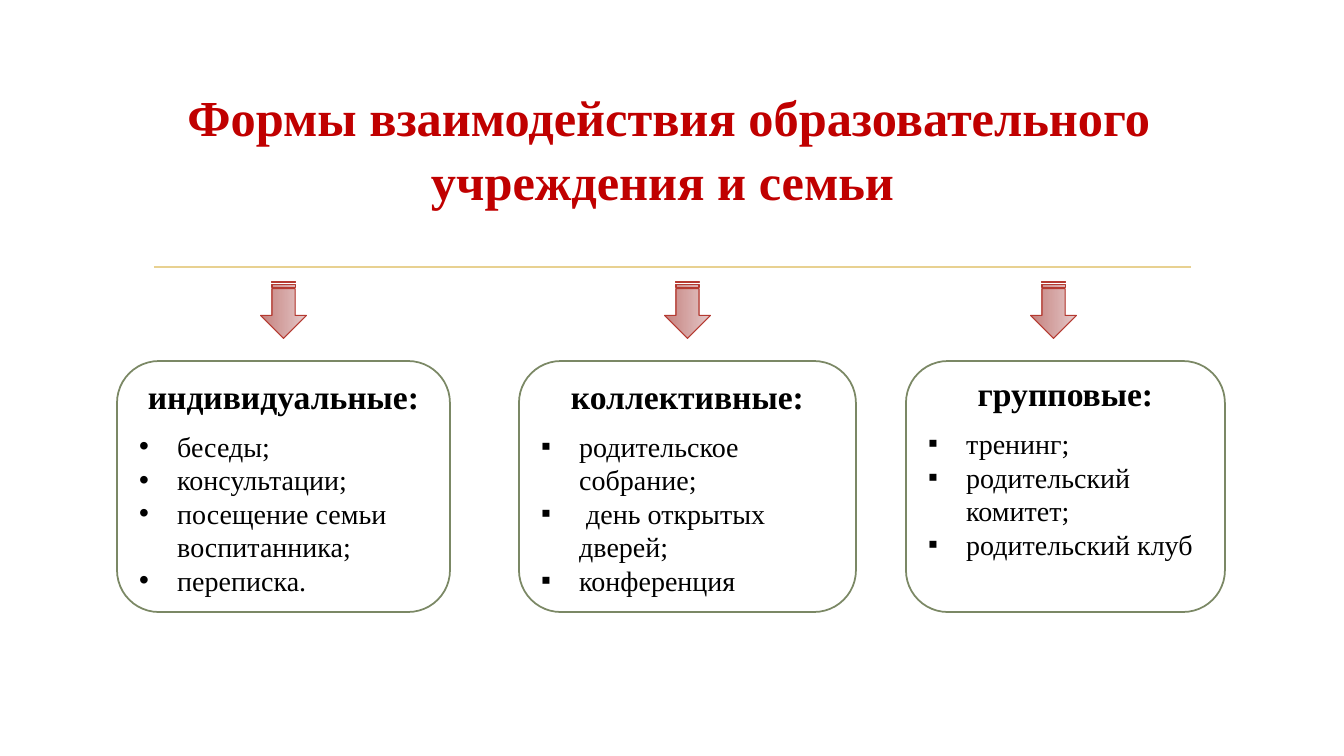
import pptx
import pptx.dml.color
import pptx.enum.shapes
import pptx.enum.text
import pptx.util
from lxml import etree
from pptx.oxml.ns import qn


class Deck:
    """Hold the style and the current slide."""

    COLORS = {
        "title": "C00000",
        "text": "000000",
        "rule": "E8D191",
        "box": "FFFFFF",
        "border": "7B8865",
        "arrow_light": "E4C8C8",
        "arrow_dark": "C5817E",
        "arrow_line": "B53A31",
    }
    FONT = "Times New Roman"
    EMU_PER_PX = 12192000 / 1344

    def __init__(self):
        self.prs = pptx.Presentation()
        self.prs.slide_width = self.px(1344)
        self.prs.slide_height = self.px(756)
        self.s = self.prs.slides.add_slide(self.prs.slide_layouts[6])

    def px(self, n):
        return pptx.util.Emu(round(n * self.EMU_PER_PX))

    def rgb(self, name):
        return pptx.dml.color.RGBColor.from_string(self.COLORS[name])

    def outline(self, shape, color, width):
        shape.line.color.rgb = self.rgb(color)
        shape.line.width = pptx.util.Pt(width)

    def frame(self, shape, bottom):
        tf = shape.text_frame
        tf.word_wrap = True
        tf.vertical_anchor = pptx.enum.text.MSO_ANCHOR.MIDDLE
        tf.margin_left = tf.margin_right = self.px(10)
        tf.margin_top = self.px(5)
        tf.margin_bottom = self.px(bottom)
        return tf

    def put_text(self, p, text, size, color="text", bold=False, centered=True):
        p.text = text
        align = pptx.enum.text.PP_ALIGN
        p.alignment = align.CENTER if centered else align.LEFT
        for r in p.runs:
            r.font.name = self.FONT
            r.font.size = pptx.util.Pt(size)
            r.font.bold = bold
            r.font.color.rgb = self.rgb(color)

    def bullet(self, p, mark):
        pPr = p._p.get_or_add_pPr()
        pPr.set("marL", str(self.px(38)))
        pPr.set("indent", str(self.px(-38)))
        etree.SubElement(pPr, qn("a:buFont")).set("typeface", "Arial")
        etree.SubElement(pPr, qn("a:buChar")).set("char", mark)

    def title(self, text, x, y, w, h):
        box = self.s.shapes.add_textbox(*map(self.px, (x, y, w, h)))
        p = self.frame(box, 30).paragraphs[0]
        self.put_text(p, text, 36, "title", bold=True)
        p.line_spacing = 1.05

    def rule(self, x1, x2, y):
        line = self.s.shapes.add_connector(
            pptx.enum.shapes.MSO_CONNECTOR.STRAIGHT,
            *map(self.px, (x1, y, x2, y)))
        self.outline(line, "rule", 1.25)
        etree.SubElement(line._element.spPr, qn("a:effectLst"))

    def arrow(self, x, y, w, h):
        sp = self.s.shapes.add_shape(
            pptx.enum.shapes.MSO_SHAPE.STRIPED_RIGHT_ARROW,
            *map(self.px, (x, y, w, h)))
        sp.rotation = 90
        sp.shadow.inherit = False
        sp.fill.gradient()
        sp.fill.gradient_angle = 270
        for stop, color in zip(sp.fill.gradient_stops,
                               ("arrow_light", "arrow_dark")):
            stop.color.rgb = self.rgb(color)
        self.outline(sp, "arrow_line", 0.75)

    def card(self, x, y, w, h, heading, mark, items, bottom):
        sp = self.s.shapes.add_shape(
            pptx.enum.shapes.MSO_SHAPE.ROUNDED_RECTANGLE,
            *map(self.px, (x, y, w, h)))
        sp.shadow.inherit = False
        sp.fill.solid()
        sp.fill.fore_color.rgb = self.rgb("box")
        self.outline(sp, "border", 1.25)
        tf = self.frame(sp, bottom)
        p = tf.paragraphs[0]
        self.put_text(p, heading, 24, bold=True)
        p.space_after = pptx.util.Pt(9.2)
        for item in items:
            p = tf.add_paragraph()
            self.bullet(p, mark)
            self.put_text(p, item, 20, centered=False)


def main():
    deck = Deck()
    deck.rule(154, 1191, 267)
    deck.title("Формы взаимодействия образовательного учреждения и семьи ",
               53, 30, 1232, 259)
    forms = [
        (255, 117, 333, "индивидуальные:", "•", 5,
         ["беседы;", "консультации;", "посещение семьи воспитанника;",
          "переписка."]),
        (659, 519, 337, "коллективные:", "▪", 5,
         ["родительское собрание;", " день открытых дверей;",
          "конференция"]),
        (1025, 906, 319, "групповые:", "▪", 44,
         ["тренинг;", "родительский комитет;", "родительский клуб"]),
    ]
    for arrow_x, x, w, heading, mark, bottom, items in forms:
        deck.arrow(arrow_x, 287, 57, 46)
        deck.card(x, 361, w, 251, heading, mark, items, bottom)
    deck.prs.save("out.pptx")


if __name__ == "__main__":
    main()
